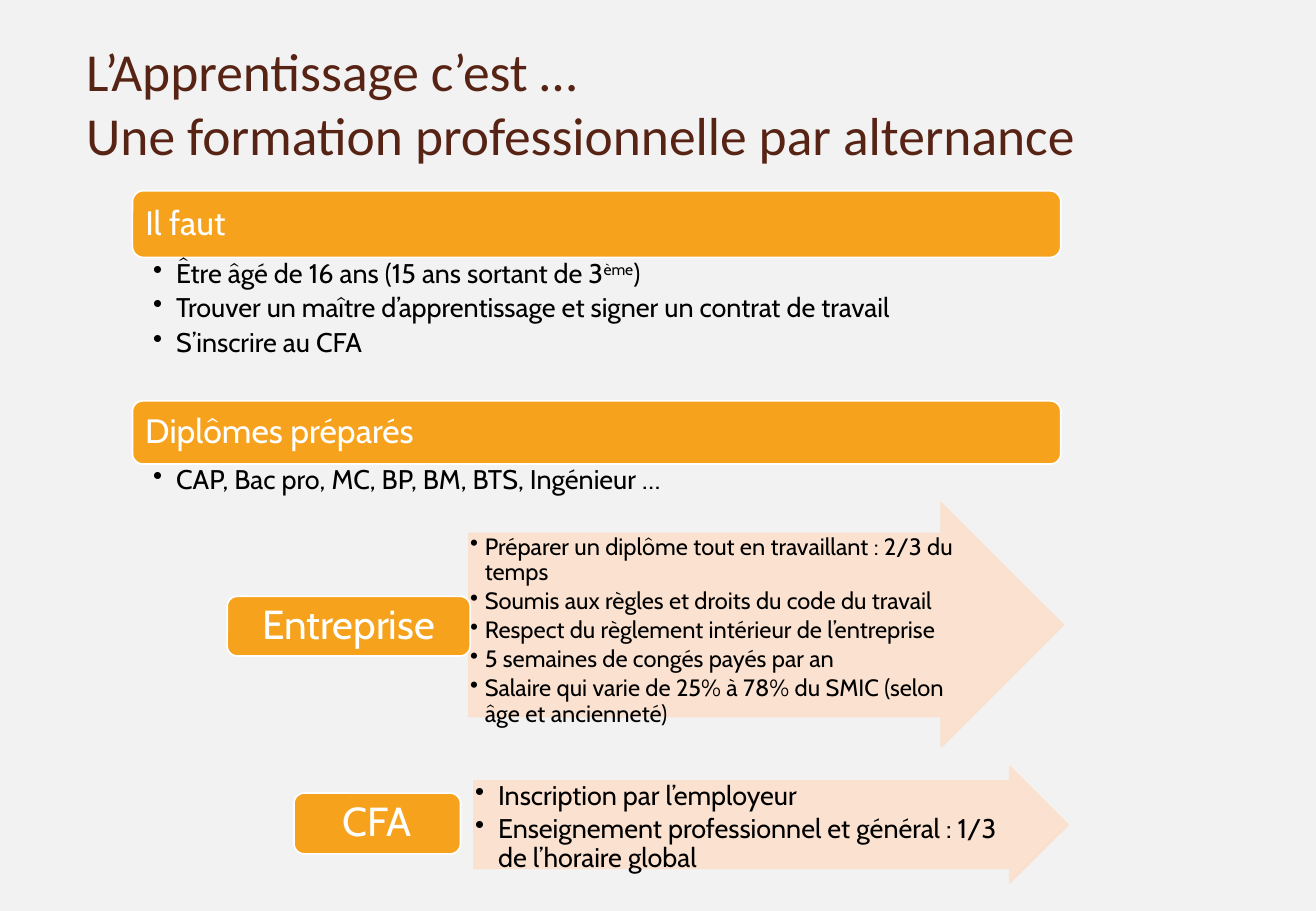
from lxml import etree
from pptx import Presentation
from pptx.dml.color import RGBColor
from pptx.enum import shapes, text
from pptx.oxml import ns
from pptx.util import Inches, Pt

COLORS = {
    "background": "F2F2F2",
    "title": "572314",
    "label": "F6A21D",
    "arrow": "FBE0CD",
    "white": "FFFFFF",
    "black": "000000",
}


def add_label(left, top, width, height, words, size, align, side_margin):
    """Add an orange rounded box with a white caption."""
    box = page.shapes.add_shape(shapes.MSO_SHAPE.ROUNDED_RECTANGLE, Inches(left),
                                Inches(top), Inches(width), Inches(height))
    box.shadow.inherit = False
    box.fill.solid()
    box.fill.fore_color.rgb = RGBColor.from_string(COLORS["label"])
    box.line.color.rgb = RGBColor.from_string(COLORS["white"])
    box.line.width = Pt(1)
    frame = box.text_frame
    frame.vertical_anchor = text.MSO_ANCHOR.MIDDLE
    frame.margin_left = frame.margin_right = Inches(side_margin)
    frame.margin_top = frame.margin_bottom = 0
    para = frame.paragraphs[0]
    para.text = words
    para.alignment = align
    para.line_spacing = 0.9
    para.font.name = "Cabin"
    para.font.size = Pt(size)
    para.font.color.rgb = RGBColor.from_string(COLORS["white"])


def add_bullets(left, top, width, height, margins, items, size, indent, space):
    """Add a bulleted list; a tuple item is (base, superscript, rest)."""
    box = page.shapes.add_textbox(Inches(left), Inches(top), Inches(width), Inches(height))
    frame = box.text_frame
    frame.word_wrap = True
    (frame.margin_left, frame.margin_top,
     frame.margin_right, frame.margin_bottom) = [Inches(m) for m in margins]
    for i, item in enumerate(items):
        para = frame.add_paragraph() if i else frame.paragraphs[0]
        pieces = item if isinstance(item, tuple) else (item,)
        for j, piece in enumerate(pieces):
            span = para.add_run()
            span.text = piece
            if j == 1:
                span.font._element.set("baseline", "30000")
        para.line_spacing = 0.9
        para.space_after = Pt(size * space)
        para.font.name = "Cabin"
        para.font.size = Pt(size)
        para.font.color.rgb = RGBColor.from_string(COLORS["black"])
        props = para._p.get_or_add_pPr()
        props.set("marL", str(Inches(indent)))
        props.set("indent", str(-Inches(indent)))
        bullet = etree.Element(ns.qn("a:buChar"), char="•")
        props.find(ns.qn("a:defRPr")).addprevious(bullet)


deck = Presentation()
deck.slide_width, deck.slide_height = Inches(10.83), Inches(7.5)
page = deck.slides.add_slide(deck.slide_layouts[6])
page.background.fill.solid()
page.background.fill.fore_color.rgb = RGBColor.from_string(COLORS["background"])

# Title
title = page.shapes.add_textbox(Inches(0.63), Inches(0.33), Inches(9.33), Inches(1.02))
title.text_frame.word_wrap = True
title.text_frame.vertical_anchor = text.MSO_ANCHOR.MIDDLE
title.text_frame.margin_left = title.text_frame.margin_right = Inches(0.08)
title.text_frame.margin_top = title.text_frame.margin_bottom = Inches(0.04)
title.text_frame.text = "L’Apprentissage c’est …\nUne formation professionnelle par alternance"
for para in title.text_frame.paragraphs:
    para.font.name = "Calibri"
    para.font.size = Pt(31.7)
    para.font.color.rgb = RGBColor.from_string(COLORS["title"])

# Full-width sections: top, height, heading, bullets
sections = [
    (1.57, 0.55, "Il faut", [
        ("Être âgé de 16 ans (15 ans sortant de 3", "ème", ")"),
        "Trouver un maître d’apprentissage et signer un contrat de travail",
        "S’inscrire au CFA",
    ]),
    (3.3, 0.52, "Diplômes préparés", ["CAP, Bac pro, MC, BP, BM, BTS, Ingénieur …"]),
]
for top, height, heading, items in sections:
    add_label(1.09, top, 7.64, height, heading, 20, text.PP_ALIGN.LEFT, 0.08)
    add_bullets(1.01, top + height, 7.8, 1.18, (0.25, 0.02, 0.12, 0.02),
                items, 16, 0.19, 0.2)

# Places of training: arrow (left, top, height), text width, label box, name, bullets
places = [
    ((3.86, 4.14, 2.01), 4.13, (1.87, 4.91, 2, 0.49), "Entreprise", 14, 0.12, [
        "Préparer un diplôme tout en travaillant : 2/3 du temps",
        "Soumis aux règles et droits du code du travail",
        "Respect du règlement intérieur de l’entreprise",
        "5 semaines de congés payés par an",
        "Salaire qui varie de 25% à 78% du SMIC (selon âge et ancienneté)",
    ]),
    ((3.9, 6.31, 0.96), 4.53, (2.42, 6.53, 1.37, 0.5), "CFA", 16, 0.19, [
        "Inscription par l’employeur",
        "Enseignement professionnel et général : 1/3 de l’horaire global",
    ]),
]
for (left, top, height), text_width, label, name, size, indent, items in places:
    arrow = page.shapes.add_shape(shapes.MSO_SHAPE.RIGHT_ARROW, Inches(left), Inches(top),
                                  Inches(4.89), Inches(height))
    arrow.adjustments[0], arrow.adjustments[1] = 0.75, 0.5
    arrow.shadow.inherit = False
    arrow.fill.solid()
    arrow.fill.fore_color.rgb = RGBColor.from_string(COLORS["arrow"])
    arrow.line.color.rgb = RGBColor.from_string(COLORS["arrow"])
    arrow.line.width = Pt(1)
    for color in arrow._element.spPr.iter(ns.qn("a:srgbClr")):
        etree.SubElement(color, ns.qn("a:alpha"), val="90000")
    # The list fills the shaft, three quarters of the arrow's height
    add_bullets(left, top + height / 8, text_width, height * 0.75, (0.01,) * 4,
                items, size, indent, 0.15)
    add_label(*label, name, 24, text.PP_ALIGN.CENTER, 0)

deck.save("out.pptx")
